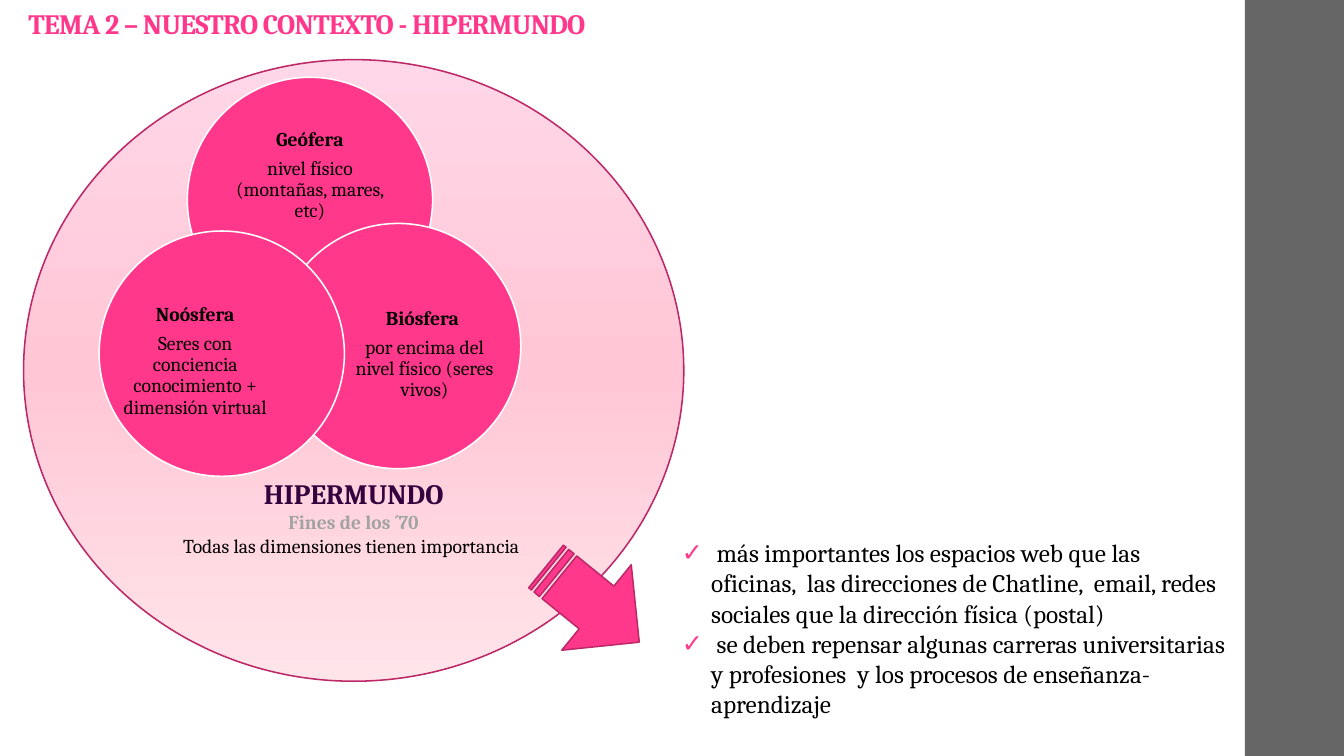
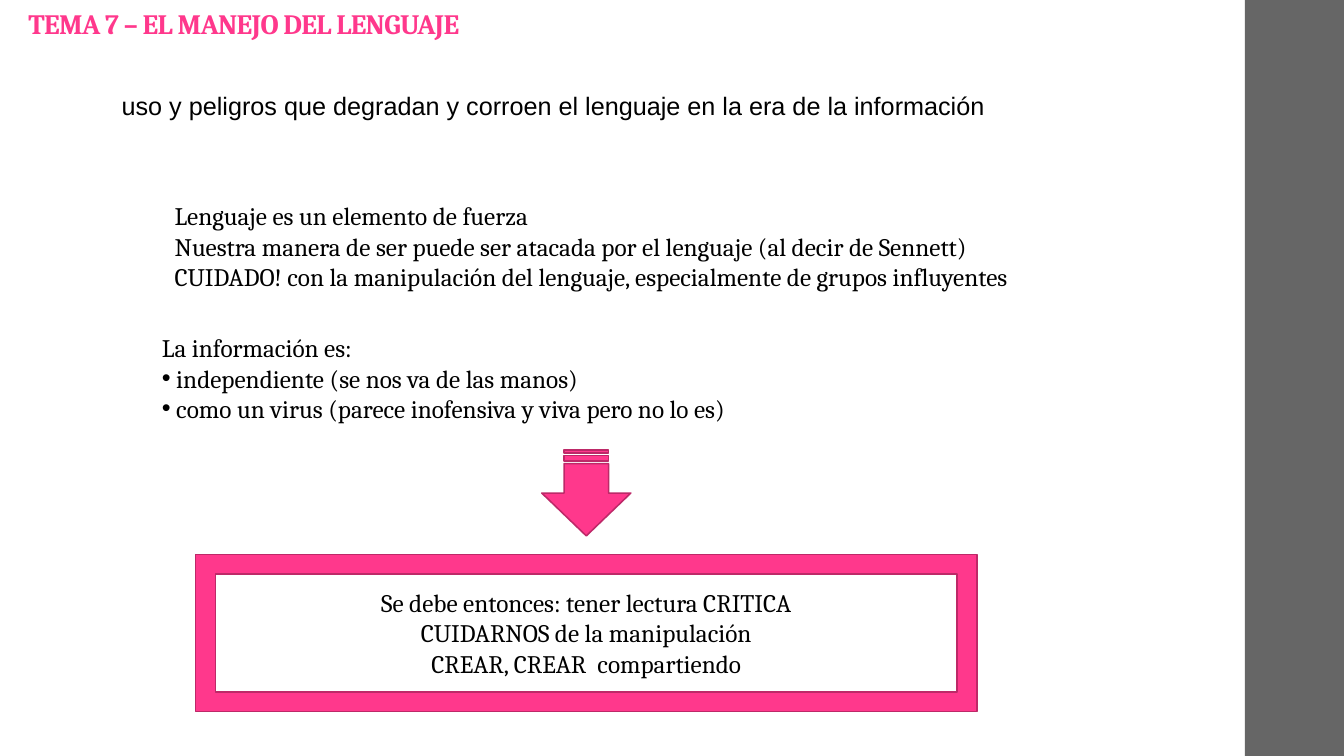
import copy

import pptx
import pptx.dml.color
import pptx.enum.shapes
import pptx.enum.text
import pptx.oxml
import pptx.oxml.ns
import pptx.util

KIND = pptx.enum.shapes.MSO_SHAPE
ALIGN = pptx.enum.text.PP_ALIGN
ANCHOR = pptx.enum.text.MSO_ANCHOR
INK = {"pink": "FF388C", "edge": "BD2968", "band": "666666", "plum": "34013F",
       "mute": "A3A3A3", "black": "000000", "white": "FFFFFF",
       "pale": "FFD7E8", "rose": "FFC7D6", "mist": "FFE4EA"}


def tint(name):
    return pptx.dml.color.RGBColor.from_string(INK[name])


class Deck:
    """Holds the style and current slide; places are columns and rows of a 16 by 9 grid."""

    cols, rows = 16, 9
    face = "Cambria"

    def __init__(self):
        self.prs = pptx.Presentation()
        self.prs.slide_width = pptx.util.Inches(13.33)
        self.prs.slide_height = pptx.util.Inches(7.5)
        self.slide = None

    def place(self, x, y, w, h):
        wide = self.prs.slide_width / self.cols
        high = self.prs.slide_height / self.rows
        return [round(n) for n in (x * wide, y * high, w * wide, h * high)]

    def page(self, title):
        self.slide = self.prs.slides.add_slide(self.prs.slide_layouts[6])
        self.shape(KIND.RECTANGLE, (14.82, 0, 1.18, 9), "band", None)
        head = self.text((0.22, 0, 12.72, 0.54), [[(title, 20, "pink", True)]],
                         anchor=ANCHOR.BOTTOM, pads=(0.1, 0.03, 0.1, 0.05), lead=0.9)
        head.text_frame.paragraphs[0].runs[0].font._element.set("spc", "-50")

    def shape(self, kind, box, fill="pink", line="edge", turn=0):
        item = self.slide.shapes.add_shape(kind, *self.place(*box))
        item.shadow.inherit = False
        item.rotation = turn
        if isinstance(fill, tuple):
            self.fade(item, fill)
        else:
            item.fill.solid()
            item.fill.fore_color.rgb = tint(fill)
        if line:
            item.line.color.rgb = tint(line)
            item.line.width = pptx.util.Pt(1.1)
        else:
            item.line.fill.background()
        return item

    def fade(self, item, names):
        item.fill.gradient()
        item.fill.gradient_angle = 270
        stops = item._element.spPr.find(".//" + pptx.oxml.ns.qn("a:gsLst"))
        stops.insert(1, copy.deepcopy(stops[0]))
        for i, (stop, name) in enumerate(zip(item.fill.gradient_stops, names)):
            stop.color.rgb = tint(name)
            stop.position = i / (len(names) - 1)

    def text(self, box, paras, **style):
        item = self.slide.shapes.add_textbox(*self.place(*box))
        self.label(item, paras, **style)
        return item

    def label(self, item, paras, align=ALIGN.LEFT, anchor=ANCHOR.TOP,
              pads=(0.1, 0.05, 0.1, 0.05), lead=None, after=None, face=None):
        frame = item.text_frame
        frame.word_wrap = True
        frame.vertical_anchor = anchor
        (frame.margin_left, frame.margin_top, frame.margin_right,
         frame.margin_bottom) = map(pptx.util.Inches, pads)
        for i, runs in enumerate(paras):
            para = frame.add_paragraph() if i else frame.paragraphs[0]
            para.alignment = align
            if lead:
                para.line_spacing = lead
            if after:
                para.space_after = pptx.util.Pt(after)
            for words, size, name, bold in runs:
                run = para.add_run()
                run.text = words
                run.font.name = face or self.face
                run.font.size = pptx.util.Pt(size)
                run.font.bold = bold
                run.font.color.rgb = tint(name)

    def mark(self, para, sign, name="black", hang=0):
        props = para._p.get_or_add_pPr()
        space = pptx.util.Inches(hang)
        props.set("marL", str(int(space)))
        props.set("indent", str(-int(space)))
        decl = pptx.oxml.ns.nsdecls("a")
        for part in (f'<a:buClr {decl}><a:srgbClr val="{INK[name]}"/></a:buClr>',
                     f'<a:buFont {decl} typeface="Arial"/>',
                     f'<a:buChar {decl} char="{sign}"/>'):
            props.append(pptx.oxml.parse_xml(part))

    def sphere(self, spot, box, name, note):
        self.shape(KIND.OVAL, (*spot, 2.92, 2.92), "pink", "white")
        self.text(box, [[(name, 14, "black", True)], [(note, 14, "black", False)]],
                  align=ALIGN.CENTER, anchor=ANCHOR.MIDDLE, pads=(0, 0, 0, 0),
                  lead=0.9, after=5.5)

    def arrow(self, box, turn):
        self.shape(KIND.STRIPED_RIGHT_ARROW, box, turn=turn)


def body(*lines):
    return [[(line, 18, "black", False)] for line in lines]


def world(deck):
    deck.page("TEMA 2 – NUESTRO CONTEXTO - HIPERMUNDO")
    globe = deck.shape(KIND.OVAL, (0.28, 0.71, 7.86, 7.4), ("pale", "rose", "mist"))
    deck.label(globe, [
        [("HIPERMUNDO", 20, "plum", True)],
        [("Fines de los ´70", 14, "mute", True)],
        [("Todas las dimensiones tienen importancia ", 14, "black", False)],
    ], align=ALIGN.CENTER, anchor=ANCHOR.BOTTOM, pads=(0.1, 0.39, 0.1, 0.33))
    for ball in (
        ((2.23, 0.92), (2.62, 1.44, 2.14, 1.31), "Geófera",
         "nivel físico (montañas, mares, etc)"),
        ((3.28, 2.66), (4.18, 3.42, 1.75, 1.61), "Biósfera ",
         "por encima del nivel físico (seres vivos)"),
        ((1.18, 2.75), (1.45, 3.5, 1.75, 1.61), "Noósfera",
         "Seres con conciencia conocimiento + dimensión virtual"),
    ):
        deck.sphere(*ball)
    points = deck.text((8, 6.34, 6.74, 2.66), body(
        " más importantes los espacios web que las oficinas,  las direcciones de "
        "Chatline,  email, redes sociales que la dirección física (postal)",
        " se deben repensar algunas carreras universitarias y profesiones  y los "
        "procesos de enseñanza-aprendizaje"))
    for para in points.text_frame.paragraphs:
        deck.mark(para, "✓", "pink", 0.29)
    deck.arrow((6.34, 6.54, 1.43, 1.31), 39.1)


def speech(deck):
    deck.page("TEMA 7 – EL MANEJO DEL LENGUAJE")
    deck.text((1.33, 1.02, 13.18, 0.48), body(
        "uso y peligros que degradan y corroen el lenguaje en la era de la información"),
        face="Arial")
    deck.text((1.96, 2.33, 11.68, 1.57), body(
        "Lenguaje es un elemento de fuerza",
        "Nuestra manera de ser puede ser atacada por el lenguaje (al decir de Sennett)",
        "CUIDADO! con la manipulación del lenguaje, especialmente de grupos influyentes"))
    facts = deck.text((1.81, 3.9, 7.86, 1.21), body(
        "La información es:",
        " independiente (se nos va de las manos)",
        " como un virus (parece inofensiva y viva pero no lo es)"))
    for para in facts.text_frame.paragraphs[1:]:
        deck.mark(para, "•")
    deck.arrow((6.47, 5.34, 1.02, 1.06), 90)
    frame = deck.shape(KIND.FRAME, (2.33, 6.6, 9.3, 1.87))
    deck.label(frame, body(
        "Se debe entonces: tener lectura CRITICA",
        "CUIDARNOS de la manipulación",
        "CREAR, CREAR  compartiendo"), align=ALIGN.CENTER, anchor=ANCHOR.MIDDLE)


def main():
    deck = Deck()
    world(deck)
    speech(deck)
    deck.prs.save("out.pptx")


if __name__ == "__main__":
    main()
